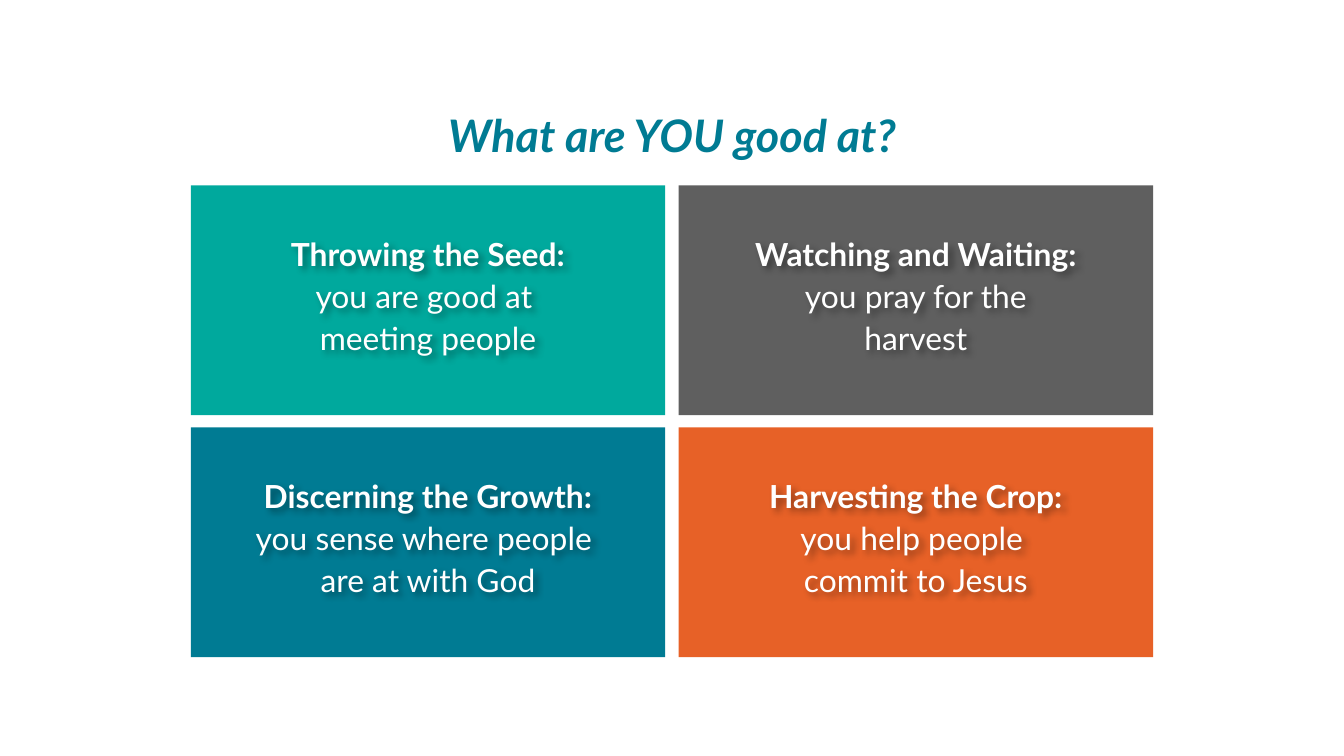
from dataclasses import dataclass

import lxml.etree
import pptx
import pptx.dml.color
import pptx.enum.shapes
import pptx.enum.text
import pptx.oxml.ns
import pptx.shapes.autoshape
import pptx.slide
import pptx.text.text
import pptx.util

Inches = pptx.util.Inches
Pt = pptx.util.Pt


@dataclass(frozen=True)
class Theme:
    font: str = "Lato"
    title_size: float = 24
    card_size: float = 17
    card_leading: float = 22.4
    teal: str = "00A99D"
    gray: str = "5F5F5F"
    blue: str = "007B93"
    orange: str = "E76127"
    white: str = "FFFFFF"
    shadow: str = "000000"


@dataclass(frozen=True)
class Card:
    heading: str
    lines: tuple[str, str]
    fill: str


THEME = Theme()
CARDS = (
    Card("Throwing the Seed:", ("you are good at ", "meeting people"), THEME.teal),
    Card("Watching and Waiting:", ("you pray for the", "harvest"), THEME.gray),
    Card("Discerning the Growth:", ("you sense where people ", "are at with God"), THEME.blue),
    Card("Harvesting the Crop:", ("you help people ", "commit to Jesus"), THEME.orange),
)
COLUMNS = 2
SLIDE_WIDTH = Inches(10)
SLIDE_HEIGHT = SLIDE_WIDTH * 9 // 16
GRID_LEFT, GRID_TOP = 1.42, 1.38
CARD_WIDTH, CARD_HEIGHT = 3.53, 1.71
COLUMN_STEP, ROW_STEP = 3.63, 1.8
TEXT_OFFSET, TEXT_HEIGHT = 0.29, 1.02


def color(value: str) -> pptx.dml.color.RGBColor:
    return pptx.dml.color.RGBColor.from_string(value)


def add_run(paragraph: pptx.text.text._Paragraph, text: str, ink: str, formats: dict) -> None:
    run = paragraph.add_run()
    run.text = text
    for name, value in {"name": THEME.font, **formats}.items():
        setattr(run.font, name, value)
    run.font.color.rgb = color(ink)


def centered_paragraph(shape: pptx.shapes.autoshape.Shape, line_spacing: float) -> pptx.text.text._Paragraph:
    shape.text_frame.word_wrap = True
    paragraph = shape.text_frame.paragraphs[0]
    formats = {"alignment": pptx.enum.text.PP_ALIGN.CENTER, "line_spacing": line_spacing}
    for name, value in formats.items():
        setattr(paragraph, name, value)
    return paragraph


def add_text_shadow(shape: pptx.shapes.autoshape.Shape) -> None:
    qn = pptx.oxml.ns.qn
    effects = lxml.etree.SubElement(shape.element.spPr, qn("a:effectLst"))
    shadow = lxml.etree.SubElement(
        effects, qn("a:outerShdw"), blurRad=str(Pt(4)), dist=str(Pt(3)), dir="2700000"
    )
    tint = lxml.etree.SubElement(shadow, qn("a:srgbClr"), val=THEME.shadow)
    lxml.etree.SubElement(tint, qn("a:alpha"), val="40000")


def draw_title(slide: pptx.slide.Slide, text: str) -> None:
    title = slide.shapes.add_textbox(Inches(0), Inches(0.67), SLIDE_WIDTH, Inches(4.68))
    formats = {"size": Pt(THEME.title_size), "bold": True, "italic": True}
    add_run(centered_paragraph(title, 1.2), text, THEME.blue, formats)


def draw_card(slide: pptx.slide.Slide, card: Card, left: float, top: float) -> None:
    group = slide.shapes.add_group_shape()
    panel = group.shapes.add_shape(
        pptx.enum.shapes.MSO_SHAPE.RECTANGLE,
        Inches(left), Inches(top), Inches(CARD_WIDTH), Inches(CARD_HEIGHT),
    )
    panel.shadow.inherit = False
    panel.fill.solid()
    panel.fill.fore_color.rgb = color(card.fill)
    panel.line.fill.background()

    label = group.shapes.add_textbox(
        Inches(left), Inches(top + TEXT_OFFSET), Inches(CARD_WIDTH), Inches(TEXT_HEIGHT)
    )
    add_text_shadow(label)
    paragraph = centered_paragraph(label, Pt(THEME.card_leading))
    size = Pt(THEME.card_size)
    add_run(paragraph, card.heading, THEME.white, {"size": size, "bold": True})
    for line in card.lines:
        paragraph.add_line_break()
        add_run(paragraph, line, THEME.white, {"size": size, "bold": False})


def main() -> None:
    presentation = pptx.Presentation()
    presentation.slide_width = SLIDE_WIDTH
    presentation.slide_height = SLIDE_HEIGHT
    slide = presentation.slides.add_slide(presentation.slide_layouts[6])
    draw_title(slide, "What are YOU good at?")
    for index, card in enumerate(CARDS):
        row, column = divmod(index, COLUMNS)
        draw_card(slide, card, GRID_LEFT + column * COLUMN_STEP, GRID_TOP + row * ROW_STEP)
    presentation.save("out.pptx")


if __name__ == "__main__":
    main()
